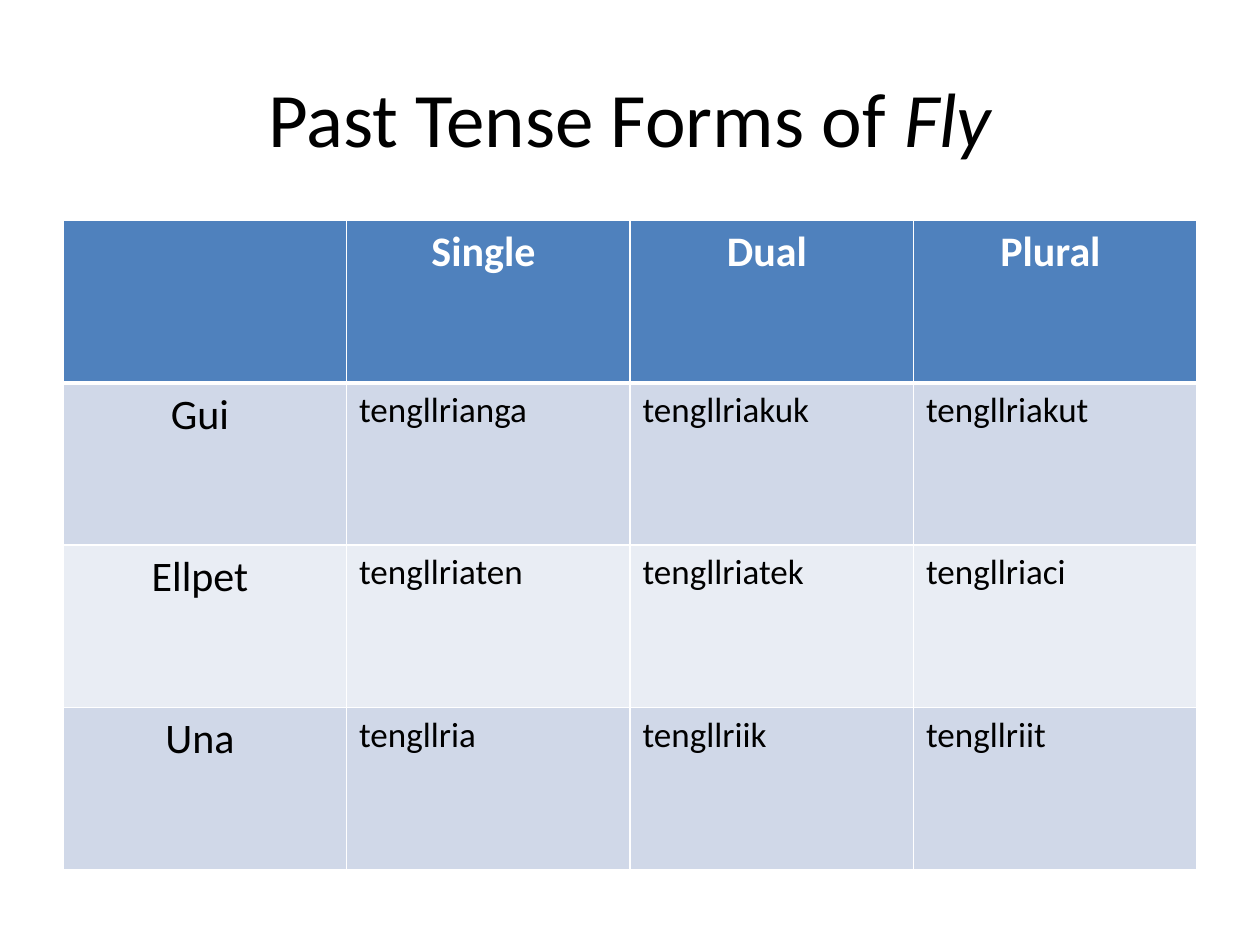
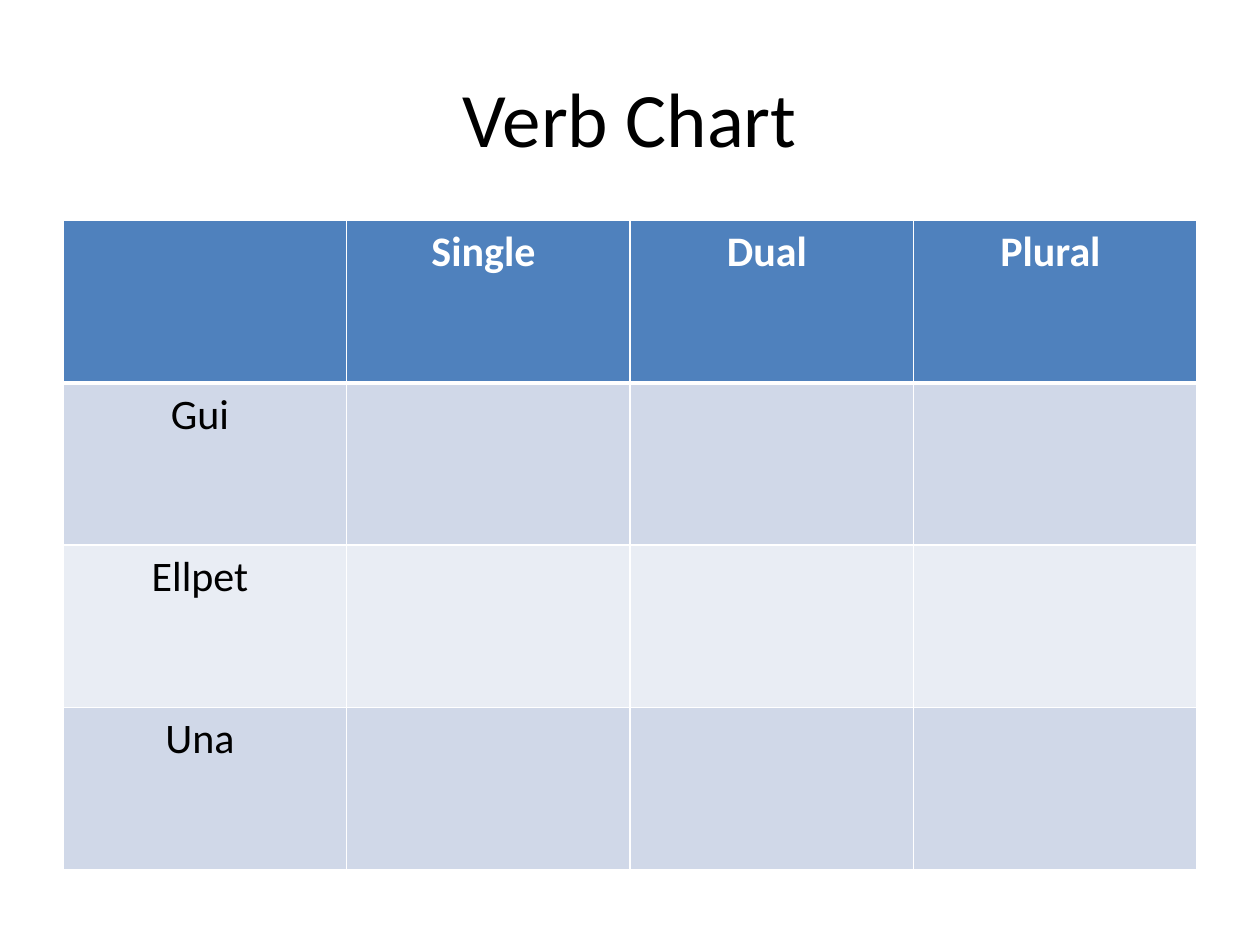
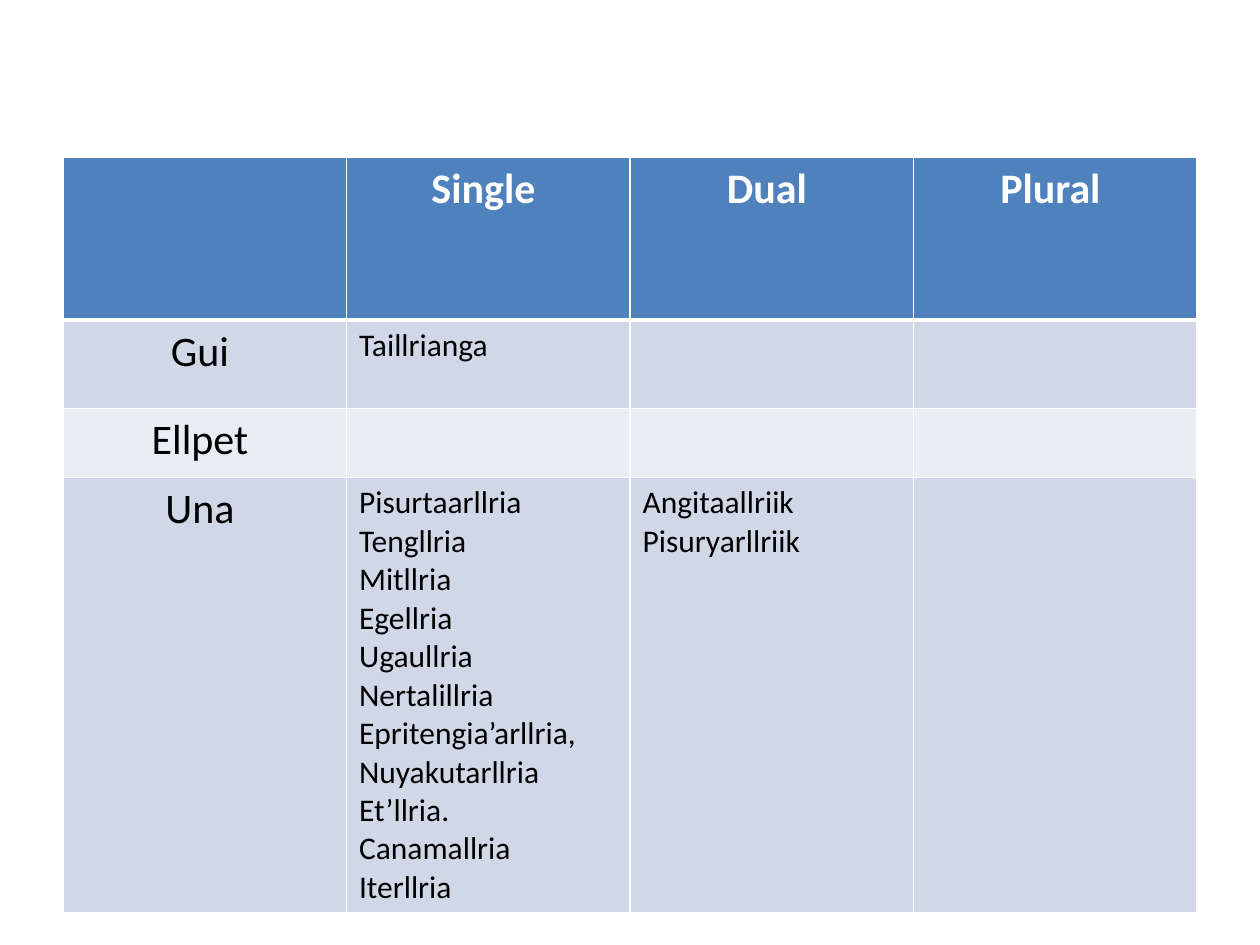
from dataclasses import dataclass

from lxml.etree import SubElement
from pptx import Presentation
from pptx.dml.color import RGBColor
from pptx.enum.text import MSO_ANCHOR, PP_ALIGN as Align
from pptx.oxml.ns import qn
from pptx.util import Cm, Pt

NUMBERS = ["Single ", "Dual ", "Plural "]
PERSONS = ["Gui ", "Ellpet ", "Una "]
EMPTY = [[[], [], []] for person in PERSONS]
EVEN_ROWS = [3.27] * 4

SLIDES = [
    {
        "title": [("Past Tense Forms of ", False), ("Fly", True)],
        "top": 4.45,
        "rows": EVEN_ROWS,
        "word_size": 20,
        "verbs": [
            [["tengllrianga"], ["tengllriakuk"], ["tengllriakut"]],
            [["tengllriaten"], ["tengllriatek"], ["tengllriaci"]],
            [["tengllria"], ["tengllriik"], ["tengllriit"]],
        ],
    },
    {
        "title": [("Verb Chart", False)],
        "top": 4.45,
        "rows": EVEN_ROWS,
        "word_size": 20,
        "verbs": EMPTY,
    },
    {
        "title": [],
        "top": 3.18,
        "rows": [3.27, 1.78, 1.4, 8.76],
        "word_size": 18,
        "verbs": [
            [["Taillrianga"], [], []],
            [[], [], []],
            [
                ["Pisurtaarllria", "Tengllria", "Mitllria", "Egellria",
                 "Ugaullria", "Nertalillria", "Epritengia’arllria,",
                 "Nuyakutarllria", "Et’llria.", "Canamallria", "Iterllria"],
                ["Angitaallriik", "Pisuryarllriik"],
                [],
            ],
        ],
    },
]


@dataclass(frozen=True)
class Theme:
    font: str = "Calibri"
    header: str = "4F81BD"
    bands: tuple = ("D0D8E8", "E9EDF4")
    light: str = "FFFFFF"
    dark: str = "000000"
    title_size: int = 44
    label_size: int = 24
    rule: int = 1
    header_rule: int = 3


THEME = Theme()
LEFT, WIDTH = 1.27, 22.86
TITLE_TOP, TITLE_HEIGHT = 0.76, 3.18
TITLE_ONLY, BLANK = 5, 6


def write(para, text, *, size, color=THEME.dark, bold=False, italic=False,
          align=Align.LEFT):
    para.alignment = align
    span = para.add_run()
    span.text = text
    font = span.font
    font.name, font.size = THEME.font, Pt(size)
    font.bold, font.italic = bold, italic
    font.color.rgb = RGBColor.from_string(color)


def write_lines(cell, lines, **style):
    frame = cell.text_frame
    for index, line in enumerate(lines):
        para = frame.add_paragraph() if index else frame.paragraphs[0]
        write(para, line, **style)


def style_cell(cell, row):
    properties = cell._tc.get_or_add_tcPr()
    widths = {
        "L": THEME.rule,
        "R": THEME.rule,
        "T": THEME.header_rule if row == 1 else THEME.rule,
        "B": THEME.header_rule if row == 0 else THEME.rule,
    }
    for side, width in widths.items():
        line = SubElement(properties, qn(f"a:ln{side}"), w=str(Pt(width)))
        fill = SubElement(line, qn("a:solidFill"))
        SubElement(fill, qn("a:srgbClr"), val=THEME.light)
    color = THEME.bands[(row - 1) % 2] if row else THEME.header
    cell.fill.solid()
    cell.fill.fore_color.rgb = RGBColor.from_string(color)


def add_title(page, parts):
    box = page.shapes.title
    box.left, box.top = Cm(LEFT), Cm(TITLE_TOP)
    box.width, box.height = Cm(WIDTH), Cm(TITLE_HEIGHT)
    box.text_frame.vertical_anchor = MSO_ANCHOR.MIDDLE
    para = box.text_frame.paragraphs[0]
    for text, italic in parts:
        write(para, text, size=THEME.title_size, italic=italic,
              align=Align.CENTER)


def add_verb_table(page, content):
    heights = content["rows"]
    grid = [[[]] + [[number] for number in NUMBERS]]
    grid += [[[person]] + verbs
             for person, verbs in zip(PERSONS, content["verbs"])]
    columns = len(grid[0])
    table = page.shapes.add_table(
        len(grid), columns, Cm(LEFT), Cm(content["top"]),
        Cm(WIDTH), Cm(sum(heights))).table
    for column in table.columns:
        column.width = Cm(WIDTH / columns)
    label = {"size": THEME.label_size, "align": Align.CENTER}
    for row, (height, entries) in enumerate(zip(heights, grid)):
        table.rows[row].height = Cm(height)
        for column, lines in enumerate(entries):
            cell = table.cell(row, column)
            style_cell(cell, row)
            if row == 0:
                style = {**label, "color": THEME.light, "bold": True}
            elif column == 0:
                style = label
            else:
                style = {"size": content["word_size"]}
            write_lines(cell, lines, **style)


def main():
    deck = Presentation()
    deck.slide_width, deck.slide_height = Cm(25.4), Cm(19.05)
    for content in SLIDES:
        layout = TITLE_ONLY if content["title"] else BLANK
        page = deck.slides.add_slide(deck.slide_layouts[layout])
        if content["title"]:
            add_title(page, content["title"])
        add_verb_table(page, content)
    deck.save("out.pptx")


if __name__ == "__main__":
    main()
